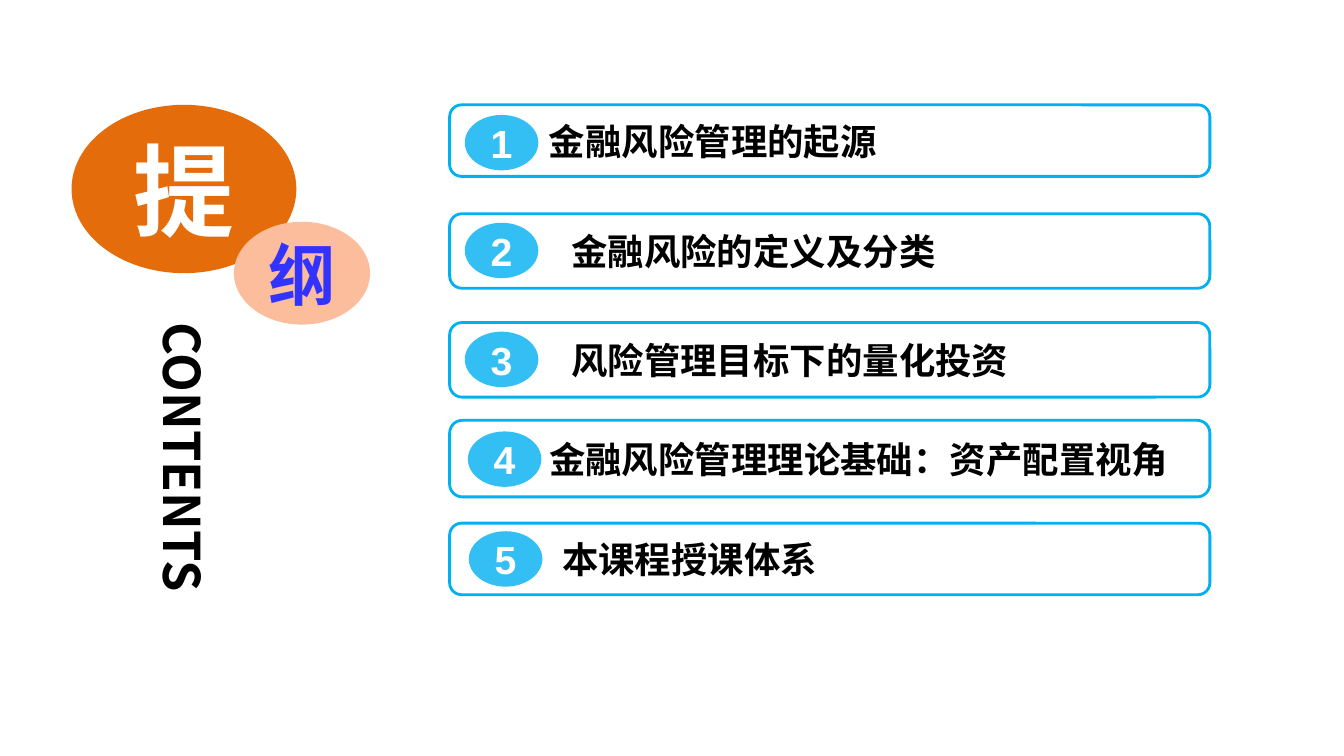
from lxml import etree
from pptx import Presentation
from pptx.dml.color import RGBColor
from pptx.enum.shapes import MSO_SHAPE as Shape
from pptx.enum.text import MSO_ANCHOR as Anchor, MSO_AUTO_SIZE as AutoSize, PP_ALIGN as Align
from pptx.oxml.ns import qn
from pptx.util import Inches, Pt

CJK = "Noto Sans CJK SC"
BLUE = "00B0F0"
BOX_LEFT, BOX_WIDTH = 4.46, 7.54
BADGE_WIDTH, BADGE_HEIGHT = 0.73, 0.55

# Agenda: text, box top, box height, text indent, badge left, badge top
AGENDA = [
    ("金融风险管理的起源", 1.04, 0.71, 0.95, 4.61, 1.14),
    ("金融风险的定义及分类", 2.12, 0.74, 1.17, 4.61, 2.21),
    ("风险管理目标下的量化投资", 3.20, 0.74, 1.17, 4.61, 3.29),
    ("金融风险管理理论基础：资产配置视角", 4.17, 0.76, 0.95, 4.64, 4.28),
    ("本课程授课体系", 5.19, 0.71, 1.08, 4.65, 5.27),
]
# Heading ovals: text, position and size, fill, text size, text colour
HEADING = [
    ("提", (0.71, 1.04, 2.23, 1.67), "E46C0A", 72, "FFFFFF"),
    ("纲", (2.32, 2.20, 1.35, 1.02), "FBBD9B", 48, "3333FF"),
]
CONTENTS = ("CONTENTS", (1.38, 3.20, 0.89, 3.00))


def rgb(value):
    return RGBColor.from_string(value)


def write(shape, text, size, color, font=CJK, align=Align.CENTER, left=0, wrap=True):
    frame = shape.text_frame
    frame.text = text
    frame.auto_size = AutoSize.NONE
    frame.word_wrap = wrap
    frame.vertical_anchor = Anchor.MIDDLE
    frame.margin_left = Inches(left)
    frame.margin_right = frame.margin_top = frame.margin_bottom = 0
    paragraph = frame.paragraphs[0]
    paragraph.alignment = align
    run = paragraph.runs[0]
    run.font.size, run.font.bold, run.font.name = Pt(size), True, font
    run.font.color.rgb = rgb(color)
    etree.SubElement(run.font._element, qn("a:ea"), typeface=font)


def add_panel(kind, box, fill, line=None, opacity=None):
    panel = slide.shapes.add_shape(kind, *map(Inches, box))
    panel.shadow.inherit = False
    panel.fill.solid()
    panel.fill.fore_color.rgb = rgb(fill)
    if line:
        panel.line.color.rgb = rgb(line)
        panel.line.width = Pt(2)
    else:
        panel.line.fill.background()
    if opacity:
        tint = panel._element.spPr.find(qn("a:solidFill"))[0]
        etree.SubElement(tint, qn("a:alpha"), val=str(opacity * 1000))
    return panel


prs = Presentation()
prs.slide_width, prs.slide_height = Inches(13.33), Inches(7.5)
slide = prs.slides.add_slide(prs.slide_layouts[5])

# Vertical title
text, box = CONTENTS
title = slide.shapes.title
title.left, title.top, title.width, title.height = map(Inches, box)
write(title, text, 36, "000000", align=Align.LEFT)
title.text_frame._txBody.bodyPr.set("vert", "eaVert")

# Heading ovals
for text, box, fill, size, color in HEADING:
    write(add_panel(Shape.OVAL, box, fill), text, size, color)

# Numbered agenda
for number, (text, top, height, indent, badge_left, badge_top) in enumerate(AGENDA, 1):
    item = add_panel(Shape.ROUNDED_RECTANGLE, (BOX_LEFT, top, BOX_WIDTH, height),
                     "FFFFFF", line=BLUE)
    write(item, text, 26, "000000", align=Align.LEFT, left=indent)
    badge = add_panel(Shape.OVAL, (badge_left, badge_top, BADGE_WIDTH, BADGE_HEIGHT),
                      BLUE, opacity=80)
    write(badge, str(number), 28, "FFFFFF", font="Arial", wrap=False)

prs.save("out.pptx")
